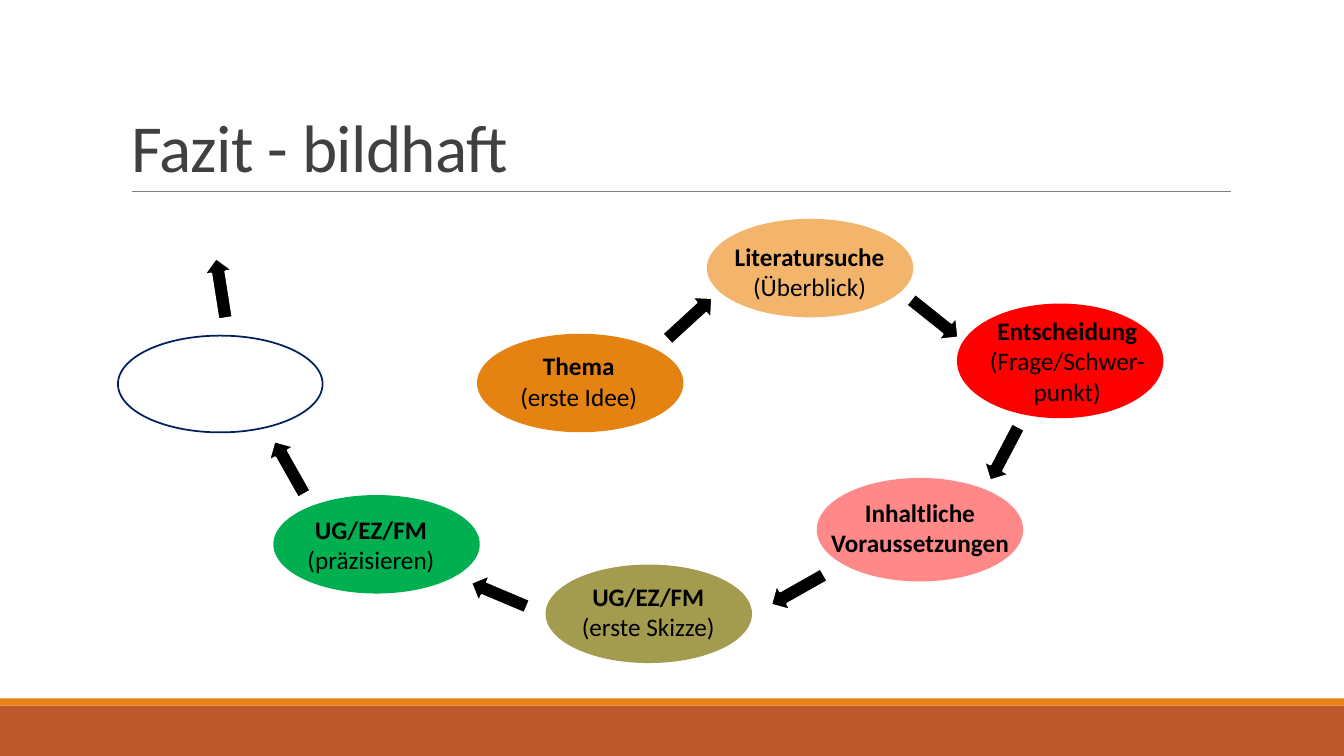
from dataclasses import dataclass

from lxml import etree
from pptx import Presentation
from pptx.dml.color import RGBColor
from pptx.enum.shapes import MSO_CONNECTOR, MSO_SHAPE
from pptx.enum.text import MSO_ANCHOR, MSO_AUTO_SIZE, PP_ALIGN
from pptx.oxml.ns import qn
from pptx.util import Inches, Pt

OVAL = MSO_SHAPE.OVAL
RECTANGLE = MSO_SHAPE.RECTANGLE
RIGHT_ARROW = MSO_SHAPE.RIGHT_ARROW
STRAIGHT = MSO_CONNECTOR.STRAIGHT
BOTTOM = MSO_ANCHOR.BOTTOM
NO_AUTOFIT = MSO_AUTO_SIZE.NONE
LEFT = PP_ALIGN.LEFT
CENTER = PP_ALIGN.CENTER


@dataclass(frozen=True)
class Theme:
    font: str = "Calibri"
    title_size: float = 48
    label_size: float = 18
    outline_width: float = 1.25
    rule_width: float = 0.5
    title: str = "404040"
    text: str = "000000"
    arrow: str = "000000"
    white: str = "FFFFFF"
    rule: str = "808080"
    footer: str = "BD582C"
    orange: str = "E48312"
    apricot: str = "F3B56C"
    red: str = "FF0000"
    pink: str = "FF8989"
    olive: str = "A39B4E"
    green: str = "00B050"
    navy: str = "002060"


THEME = Theme()
STEP_WIDTH, STEP_HEIGHT = 2.03, 0.96
LABEL_WIDTH, LABEL_HEIGHT = 1.74, 0.71
ARROW_WIDTH, ARROW_HEIGHT = 0.6, 0.28

STEPS = [
    ((4.74, 3.32, STEP_WIDTH, STEP_HEIGHT), THEME.orange,
     (4.87, 3.43, LABEL_WIDTH, LABEL_HEIGHT), "Thema", "(erste Idee)"),
    ((7.02, 2.18, STEP_WIDTH, STEP_HEIGHT), THEME.apricot,
     (7.16, 2.34, LABEL_WIDTH, LABEL_HEIGHT), "Literatursuche", "(Überblick)"),
    ((9.5, 3.02, STEP_WIDTH, 1.12), THEME.red,
     (9.64, 3.08, 1.89, 1.01), "Entscheidung", "(Frage/Schwer-punkt)"),
    ((8.11, 4.75, STEP_WIDTH, 1.01), THEME.pink,
     (8.11, 4.88, STEP_WIDTH, LABEL_HEIGHT), "Inhaltliche Voraussetzungen", None),
    ((5.42, 5.61, STEP_WIDTH, STEP_HEIGHT), THEME.olive,
     (5.56, 5.72, LABEL_WIDTH, LABEL_HEIGHT), "UG/EZ/FM", "(erste Skizze)"),
    ((2.72, 4.92, STEP_WIDTH, STEP_HEIGHT), THEME.green,
     (2.81, 5.05, LABEL_WIDTH, LABEL_HEIGHT), "UG/EZ/FM", "(präzisieren)"),
]
OPEN_STEP = (1.17, 3.33, STEP_WIDTH, STEP_HEIGHT)

ARROWS = [
    (6.54, 3.02, 317.5),
    (8.97, 3.02, 38.6),
    (9.66, 4.36, 117.7),
    (7.61, 5.71, 150.5),
    (4.65, 5.76, 202.9),
    (2.57, 4.5, 240.5),
    (1.89, 2.72, 261),
]


def rgb(color):
    return RGBColor.from_string(color)


def inches(box):
    return [Inches(length) for length in box]


def format_font(font, size, color, bold=False):
    font.name = THEME.font
    font.size = Pt(size)
    font.bold = bold
    font.color.rgb = rgb(color)


def add_filled(slide, preset, box, fill, outline=None):
    shape = slide.shapes.add_shape(preset, *inches(box))
    shape.shadow.inherit = False
    shape.fill.solid()
    shape.fill.fore_color.rgb = rgb(fill)
    if outline:
        shape.line.color.rgb = rgb(outline)
        shape.line.width = Pt(THEME.outline_width)
    else:
        shape.line.fill.background()
    return shape


def add_title_rule(slide):
    rule = slide.shapes.add_connector(STRAIGHT, *inches((1.31, 1.9, 12.21, 1.9)))
    rule.line.color.rgb = rgb(THEME.rule)
    rule.line.width = Pt(THEME.rule_width)
    etree.SubElement(rule._element.spPr, qn("a:effectLst"))


def set_title(slide, wording):
    title = slide.shapes.title
    title.left, title.top, title.width, title.height = inches((1.2, 0.31, 11, 1.59))
    frame = title.text_frame
    frame.text = wording
    frame.auto_size = NO_AUTOFIT
    frame.vertical_anchor = BOTTOM
    heading = frame.paragraphs[0]
    heading.alignment = LEFT
    heading.line_spacing = 0.85
    format_font(heading.font, THEME.title_size, THEME.title)
    heading.runs[0]._r.get_or_add_rPr().set("spc", "-50")


def add_label(slide, box, heading, detail):
    frame = slide.shapes.add_textbox(*inches(box)).text_frame
    frame.word_wrap = True
    frame.text = "\n".join(filter(None, (heading, detail)))
    for index, paragraph in enumerate(frame.paragraphs):
        paragraph.alignment = CENTER
        format_font(paragraph.font, THEME.label_size, THEME.text, bold=index == 0)


def add_step(slide, box, color, label_box, heading, detail):
    add_filled(slide, OVAL, box, color, color)
    add_label(slide, label_box, heading, detail)


def add_arrow(slide, left, top, angle):
    box = (left, top, ARROW_WIDTH, ARROW_HEIGHT)
    arrow = add_filled(slide, RIGHT_ARROW, box, THEME.arrow, THEME.white)
    arrow.rotation = angle


def main():
    presentation = Presentation()
    presentation.slide_width = Inches(13.33)
    presentation.slide_height = Inches(7.5)
    slide = presentation.slides.add_slide(presentation.slide_layouts[5])

    add_filled(slide, RECTANGLE, (0, 7, 13.33, 0.5), THEME.footer)
    add_filled(slide, RECTANGLE, (0, 6.93, 13.33, 0.07), THEME.orange)
    add_title_rule(slide)
    set_title(slide, "Fazit - bildhaft")
    for step in STEPS:
        add_step(slide, *step)
    add_filled(slide, OVAL, OPEN_STEP, THEME.white, THEME.navy)
    for arrow in ARROWS:
        add_arrow(slide, *arrow)

    presentation.save("out.pptx")


if __name__ == "__main__":
    main()
